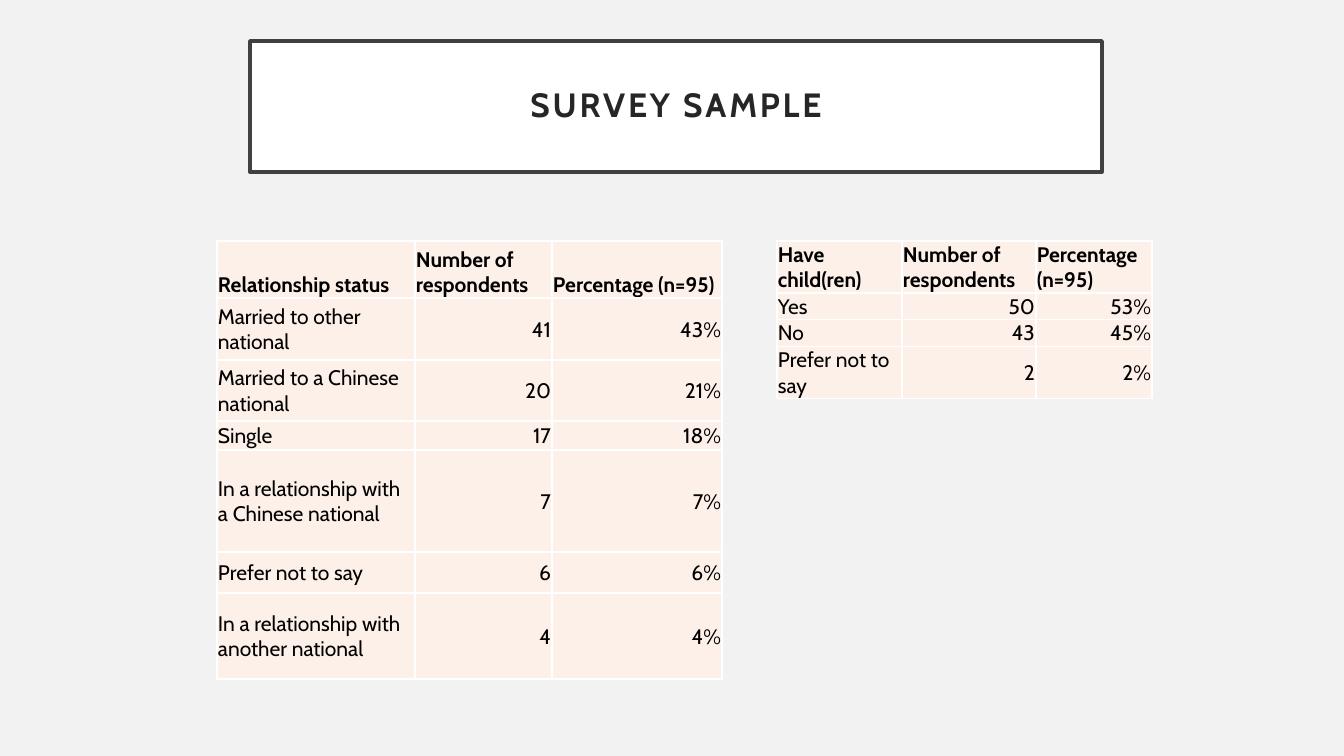
from lxml import etree
from pptx import Presentation
from pptx import util as u
from pptx.dml.color import RGBColor
from pptx.enum import shapes, text
from pptx.oxml import ns

TITLE = "SURVEY SAMPLE"
STATUS = [
    ("Relationship status", "Number of respondents", "Percentage (n=95)"),
    ("Married to other national", "41", "43%"),
    ("Married to a Chinese national", "20", "21%"),
    ("Single", "17", "18%"),
    ("In a relationship with a Chinese national", "7", "7%"),
    ("Prefer not to say", "6", "6%"),
    ("In a relationship with another national", "4", "4%"),
]
CHILD = [
    ("Have child(ren)", "Number of respondents", "Percentage (n=95)"),
    ("Yes", "50", "53%"),
    ("No", "43", "45%"),
    ("Prefer not to say", "2", "2%"),
]

FONT = "Cabin"
BACK = RGBColor(0xF2, 0xF2, 0xF2)
WHITE = RGBColor(0xFF, 0xFF, 0xFF)
FRAME = RGBColor(0x40, 0x40, 0x40)
INK = RGBColor(0x26, 0x26, 0x26)
BLACK = RGBColor(0, 0, 0)
PEACH = RGBColor(0xFD, 0xF0, 0xE8)

MID, LOW = text.MSO_ANCHOR.MIDDLE, text.MSO_ANCHOR.BOTTOM
LEFT, RIGHT, CENTER = text.PP_ALIGN.LEFT, text.PP_ALIGN.RIGHT, text.PP_ALIGN.CENTER


def px(n):
    return u.Emu(round(n * 914400 / 100.8))


def write(frame, words, size=15, color=BLACK, bold=False, align=LEFT, lead=None, track=0):
    para = frame.paragraphs[0]
    para.alignment = align
    para.line_spacing = lead
    run = para.add_run()
    run.text = words
    font = run.font
    font.name, font.size, font.bold = FONT, u.Pt(size), bold
    font.color.rgb = color
    if track:
        font._element.set("spc", str(track * 100))


def edge(cell):
    props = cell._tc.get_or_add_tcPr()
    for side in ("a:lnL", "a:lnR", "a:lnT", "a:lnB"):
        line = etree.SubElement(props, ns.qn(side), w=str(u.Pt(1)))
        fill = etree.SubElement(line, ns.qn("a:solidFill"))
        etree.SubElement(fill, ns.qn("a:srgbClr"), val=str(WHITE))


def grid(slide, data, x, y, cols, rows, first=MID):
    table = slide.shapes.add_table(
        len(rows), len(cols), px(x), px(y), px(sum(cols)), px(sum(rows))).table
    for col, wide in zip(table.columns, cols):
        col.width = px(wide)
    for row, high in zip(table.rows, rows):
        row.height = px(high)
    for r, line in enumerate(data):
        for c, words in enumerate(line):
            cell = table.cell(r, c)
            edge(cell)
            cell.fill.solid()
            cell.fill.fore_color.rgb = PEACH
            cell.margin_left = cell.margin_right = cell.margin_top = px(1)
            cell.margin_bottom = 0
            head = r == 0
            cell.vertical_anchor = LOW if head else MID if c else first
            write(cell.text_frame, words, bold=head,
                  align=RIGHT if c and not head else LEFT)


def main():
    deck = Presentation()
    deck.slide_width, deck.slide_height = px(1344), px(756)
    slide = deck.slides.add_slide(deck.slide_layouts[6])
    slide.background.fill.solid()
    slide.background.fill.fore_color.rgb = BACK

    box = slide.shapes.add_shape(
        shapes.MSO_SHAPE.RECTANGLE, px(250), px(41), px(852), px(131))
    box.shadow.inherit = False
    box.fill.solid()
    box.fill.fore_color.rgb = WHITE
    box.line.color.rgb = FRAME
    box.line.width = u.Pt(2.5)
    frame = box.text_frame
    frame.word_wrap = True
    frame.vertical_anchor = MID
    frame.margin_left = frame.margin_right = px(20)
    frame.margin_top = frame.margin_bottom = px(20)
    write(frame, TITLE, size=24, color=INK, bold=True, align=CENTER, lead=0.9, track=2)

    grid(slide, STATUS, 217, 241, (198, 137, 170), (57, 62, 61, 29, 102, 41, 86))
    grid(slide, CHILD, 777, 241, (125, 134, 116), (22,) * len(CHILD), first=LOW)
    deck.save("out.pptx")


if __name__ == "__main__":
    main()
